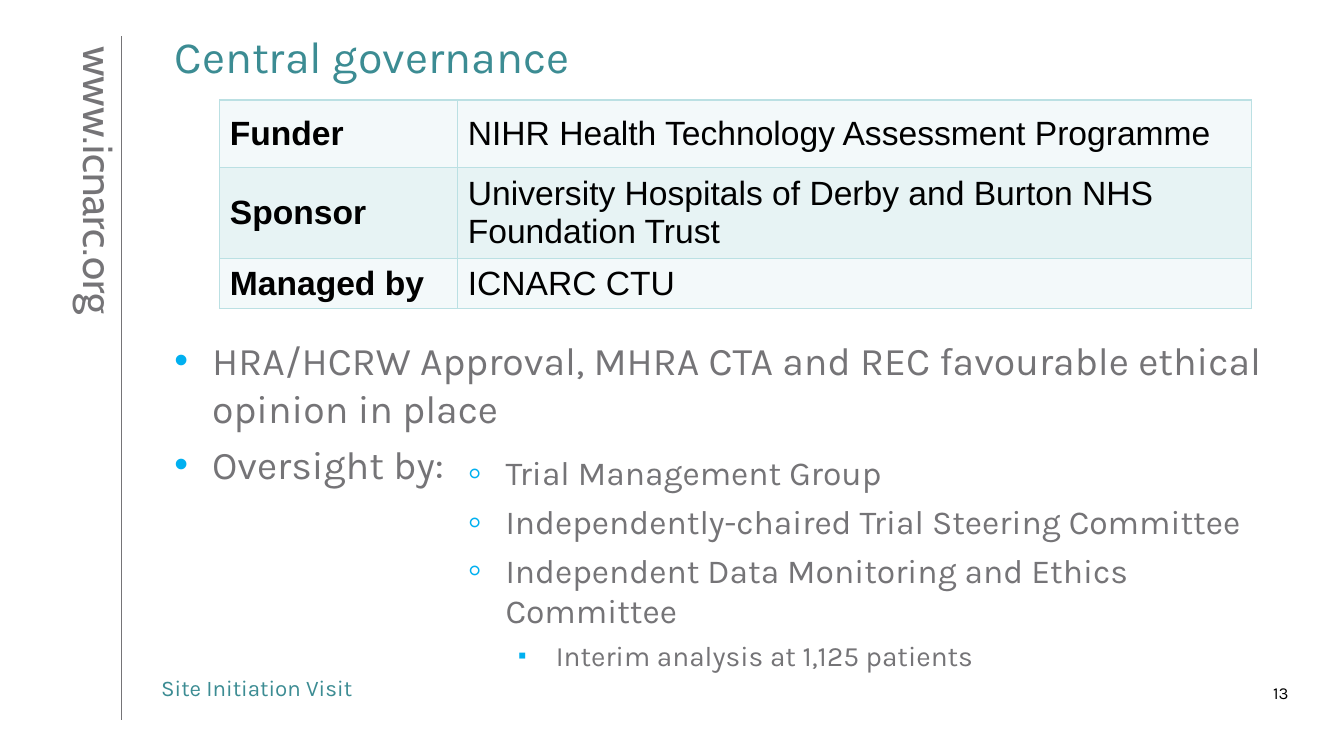
from lxml.etree import SubElement
from pptx import Presentation
from pptx.dml.color import RGBColor
from pptx.enum.shapes import MSO_CONNECTOR
from pptx.enum.text import MSO_ANCHOR, MSO_AUTO_SIZE, PP_ALIGN
from pptx.oxml.ns import qn
from pptx.util import Pt

TEAL = "3C8C93"
GREY = "757477"
BLACK = "000000"
BULLET_BLUE = "00B0F0"
BORDER = "BBE0E3"
ROW_FILLS = ["F3F9FA", "E7F3F4"]

GOVERNANCE = [
    ("Funder", "NIHR Health Technology Assessment Programme"),
    ("Sponsor", "University Hospitals of Derby and Burton NHS Foundation Trust"),
    ("Managed by", "ICNARC CTU"),
]
APPROVALS = [
    "HRA/HCRW Approval, MHRA CTA and REC favourable ethical opinion in place",
    "Oversight by:",
]
COMMITTEES = [
    "Trial Management Group",
    "Independently-chaired Trial Steering Committee",
    "Independent Data Monitoring and Ethics Committee",
]


def colour(value):
    return RGBColor.from_string(value)


def add_bullet(paragraph, char, scale, indent):
    properties = paragraph._p.get_or_add_pPr()
    properties.set("marL", str(Pt(indent)))
    properties.set("indent", str(-Pt(27)))
    tint = SubElement(properties, qn("a:buClr"))
    SubElement(tint, qn("a:srgbClr"), val=BULLET_BLUE)
    SubElement(properties, qn("a:buSzPct"), val=str(scale * 1000))
    SubElement(properties, qn("a:buFont"), typeface="Arial")
    SubElement(properties, qn("a:buChar"), char=char)


def write(frame, text, size=24, font="Karla", tint=GREY, bold=False,
          align=PP_ALIGN.LEFT, before=0, level=0, bullet=None, scale=100, indent=27):
    paragraph = frame.paragraphs[0]
    if paragraph.runs:
        paragraph = frame.add_paragraph()
        paragraph.space_before = Pt(before)
    paragraph.alignment = align
    paragraph.level = level
    if bullet:
        add_bullet(paragraph, bullet, scale, indent)
    run = paragraph.add_run()
    run.text = text
    run.font.size = Pt(size)
    run.font.name = font
    run.font.bold = bold
    run.font.color.rgb = colour(tint)


def add_frame(slide, left, top, width, height):
    frame = slide.shapes.add_textbox(Pt(left), Pt(top), Pt(width), Pt(height)).text_frame
    frame.word_wrap = True
    return frame


def add_side_band(slide, left, top, width, height):
    rule = slide.shapes.add_connector(
        MSO_CONNECTOR.STRAIGHT, Pt(left + width), Pt(top), Pt(left + width), Pt(top + height))
    rule.line.color.rgb = colour(GREY)
    rule.line.width = Pt(1)
    SubElement(rule._element.spPr, qn("a:effectLst"))
    address = add_frame(slide, left, top, 51, 233)
    address._txBody.bodyPr.set("vert", "eaVert")
    write(address, "www.icnarc.org", size=30, font="Cabin")


def add_title(slide, left, top, width, height):
    title = slide.shapes.title
    title.left, title.top, title.width, title.height = Pt(left), Pt(top), Pt(width), Pt(height)
    title.text_frame.auto_size = MSO_AUTO_SIZE.NONE
    title.text_frame.vertical_anchor = MSO_ANCHOR.MIDDLE
    write(title.text_frame, "Central governance", size=32, tint=TEAL)


def add_borders(cell):
    properties = cell._tc.get_or_add_tcPr()
    for side in ("lnL", "lnR", "lnT", "lnB"):
        edge = SubElement(properties, qn(f"a:{side}"), w=str(Pt(1)))
        SubElement(SubElement(edge, qn("a:solidFill")), qn("a:srgbClr"), val=BORDER)


def add_governance_table(slide, left, top, width, height):
    governance = slide.shapes.add_table(
        len(GOVERNANCE), 2, Pt(left), Pt(top), Pt(width), Pt(height)).table
    governance.first_row = governance.horz_banding = False
    governance.columns[0].width = Pt(170)
    governance.columns[1].width = Pt(width - 170)
    for index, (entry, row_height) in enumerate(zip(GOVERNANCE, (48, 65, height - 113))):
        governance.rows[index].height = Pt(row_height)
        for column, text in enumerate(entry):
            cell = governance.cell(index, column)
            add_borders(cell)
            cell.fill.solid()
            cell.fill.fore_color.rgb = colour(ROW_FILLS[index % 2])
            cell.vertical_anchor = MSO_ANCHOR.MIDDLE
            write(cell.text_frame, text, font="Arial", tint=BLACK, bold=column == 0)


def add_approvals(slide, left, top, width, height):
    approvals = add_frame(slide, left, top, width, height)
    for approval in APPROVALS:
        write(approvals, approval, size=28, before=6.5, bullet="•")


def add_committees(slide, left, top, width, height):
    committees = add_frame(slide, left, top, width, height)
    for committee in COMMITTEES:
        write(committees, committee, before=6, bullet="◦", scale=120)
    write(committees, "Interim analysis at 1,125 patients", size=20, before=6,
          level=1, bullet="▪", scale=85, indent=63)


def add_footer(slide, left, top, width, height):
    visit = add_frame(slide, left, top, 317.5, height)
    write(visit, "Site Initiation Visit", size=16, tint=TEAL)
    number = add_frame(slide, left + width - 22, top + 6, 22, 21.5)
    number.word_wrap = False
    number.vertical_anchor = MSO_ANCHOR.MIDDLE
    number.margin_left = number.margin_right = Pt(3.6)
    write(number, "13", size=12, tint=BLACK, align=PP_ALIGN.RIGHT)


def main():
    deck = Presentation()
    deck.slide_width, deck.slide_height = Pt(960), Pt(540)
    slide = deck.slides.add_slide(deck.slide_layouts[5])
    add_side_band(slide, 42.5, 26, 44.5, 488)
    add_title(slide, 117.5, 15, 808.5, 50)
    add_governance_table(slide, 157, 71.5, 737, 149)
    add_approvals(slide, 117.5, 237, 808.5, 221)
    add_committees(slide, 327, 319.5, 607, 163.5)
    add_footer(slide, 108, 478, 816, 26.5)
    deck.save("out.pptx")


if __name__ == "__main__":
    main()
